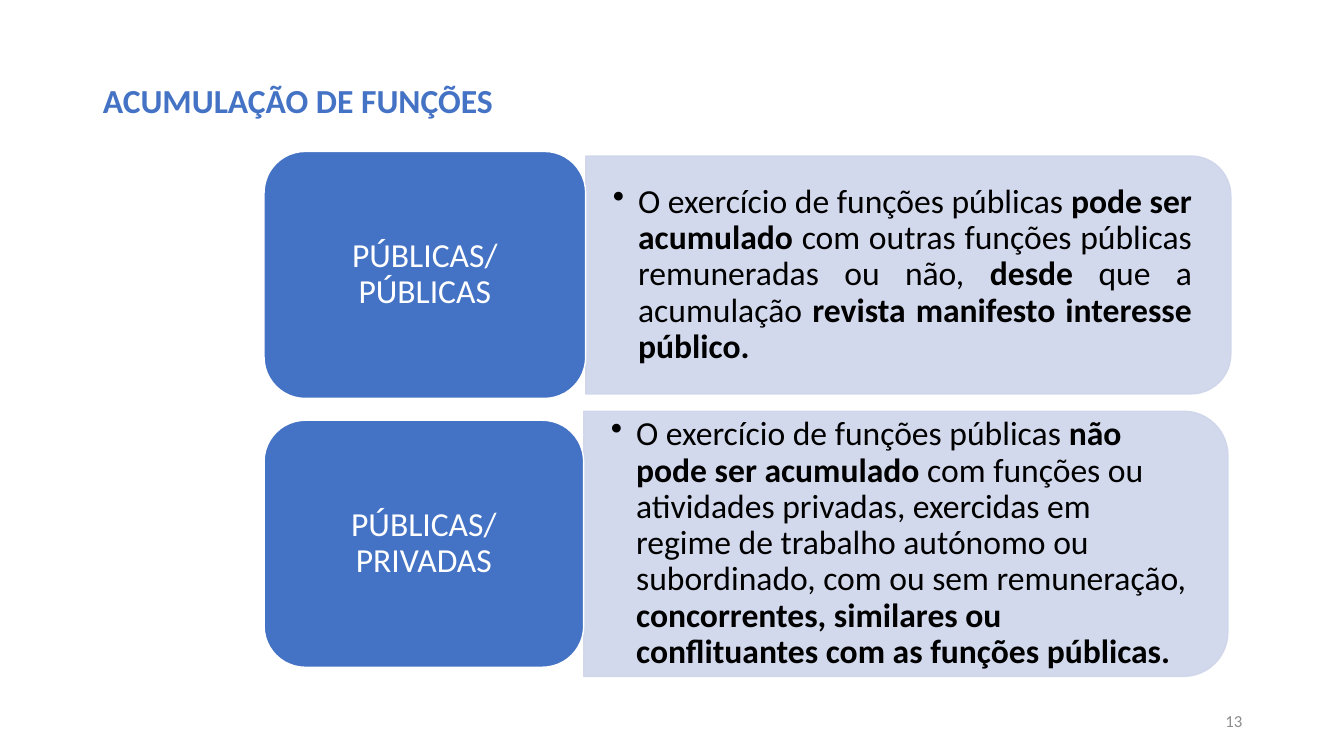
from lxml.etree import SubElement as Sub
from pptx import Presentation
from pptx.dml.color import RGBColor as RGB
from pptx.enum.shapes import MSO_SHAPE as SHAPE
from pptx.enum.text import MSO_ANCHOR as ANCHOR, MSO_AUTO_SIZE as FIT, PP_ALIGN as ALIGN
from pptx.oxml.ns import qn
from pptx.util import Inches, Pt

COLORS = {"blue": "4472C4", "pale": "CFD5EA", "white": "FFFFFF",
          "black": "000000", "gray": "8C8C8C"}

prs = Presentation()
prs.slide_width, prs.slide_height = Inches(13.33), Inches(7.5)
W, H = prs.slide_width, prs.slide_height
s = prs.slides.add_slide(prs.slide_layouts[5])


def style(p, color, size=24, align=ALIGN.LEFT, spacing=0.9):
    p.font.name, p.font.size = "Calibri", Pt(size)
    p.font.color.rgb = RGB.from_string(COLORS[color])
    p.alignment, p.line_spacing = align, spacing


def paint(sp, fill, line):
    sp.shadow.inherit = False
    sp.fill.solid()
    sp.fill.fore_color.rgb = RGB.from_string(COLORS[fill])
    sp.line.color.rgb = RGB.from_string(COLORS[line])
    sp.line.width = Pt(1)


# Title
title = s.shapes.title
title.left, title.top = int(W * 0.069), int(H * 0.1053)
title.width, title.height = int(W * 0.8627), int(H * 0.07)
tf = title.text_frame
tf.text = "ACUMULAÇÃO DE FUNÇÕES"
tf.vertical_anchor, tf.auto_size = ANCHOR.TOP, FIT.NONE
style(tf.paragraphs[0], "blue")
tf.paragraphs[0].font.bold = True

# Rows: label, row centre, label width, panel width and height (shares), alignment,
# and runs that alternate between regular and bold
rows = [
    ("PÚBLICAS/ PÚBLICAS", 0.3637, 0.2393, 0.48, 0.3147, ALIGN.JUSTIFY,
     ["O exercício de funções públicas ", "pode ser acumulado ",
      "com outras funções públicas remuneradas ou não, ", "desde ",
      "que a acumulação ", "revista manifesto interesse público."]),
    ("PÚBLICAS/ PRIVADAS", 0.7193, 0.2378, 0.4793, 0.3507, ALIGN.LEFT,
     ["O exercício de funções públicas ", "não pode ser acumulado ",
      "com funções ou atividades privadas, exercidas em regime de trabalho "
      "autónomo ou subordinado, com ou sem remuneração, ",
      "concorrentes, similares ou conflituantes com as funções públicas."]),
]
label_left, label_h = int(W * 0.1965), int(H * 0.3267)
CORNER = 0.0488  # text inset of a rounded corner, as a share of the panel height

for label, center, label_share, w_share, h_share, align, texts in rows:
    mid, label_w = int(H * center), int(W * label_share)
    panel_left, panel_w, panel_h = label_left + label_w, int(W * w_share), int(H * h_share)

    # Panel: a shape with two rounded corners, turned to the right
    sp = s.shapes.add_shape(SHAPE.ROUND_2_SAME_RECTANGLE,
                            panel_left + (panel_w - panel_h) // 2, mid - panel_w // 2,
                            panel_h, panel_w)
    sp.rotation = 90
    paint(sp, "pale", "pale")
    for clr in sp._element.spPr.iter(qn("a:srgbClr")):
        Sub(clr, qn("a:alpha"), val="90000")

    # Panel text
    text_h = int(panel_h * (1 - 2 * CORNER))
    box = s.shapes.add_textbox(panel_left, mid - text_h // 2,
                               int(panel_w - panel_h * CORNER), text_h)
    tf = box.text_frame
    tf.word_wrap, tf.vertical_anchor = True, ANCHOR.MIDDLE
    tf.margin_left = tf.margin_right = Inches(0.27)
    tf.margin_top = tf.margin_bottom = Inches(0.14)
    p = tf.paragraphs[0]
    style(p, "black", align=align)
    for i, text in enumerate(texts):
        r = p.add_run()
        r.text, r.font.bold = text, i % 2 == 1
    pPr = p._p.get_or_add_pPr()
    pPr.set("marL", str(Inches(0.25)))
    pPr.set("indent", str(-Inches(0.25)))
    bullet = Sub(pPr, qn("a:buChar"), char="•")
    pPr.find(qn("a:defRPr")).addprevious(bullet)

    # Label
    sp = s.shapes.add_shape(SHAPE.ROUNDED_RECTANGLE, label_left, mid - label_h // 2,
                            label_w, label_h)
    paint(sp, "blue", "white")
    tf = sp.text_frame
    tf.text, tf.word_wrap, tf.vertical_anchor = label, True, ANCHOR.MIDDLE
    style(tf.paragraphs[0], "white", align=ALIGN.CENTER)

# Slide number
box = s.shapes.add_textbox(int(W * 0.7067), int(H * 0.9267), int(W * 0.225), int(H * 0.0533))
tf = box.text_frame
tf.text, tf.word_wrap, tf.vertical_anchor = "13", True, ANCHOR.MIDDLE
style(tf.paragraphs[0], "gray", 12, ALIGN.RIGHT, 1.0)

prs.save("out.pptx")
